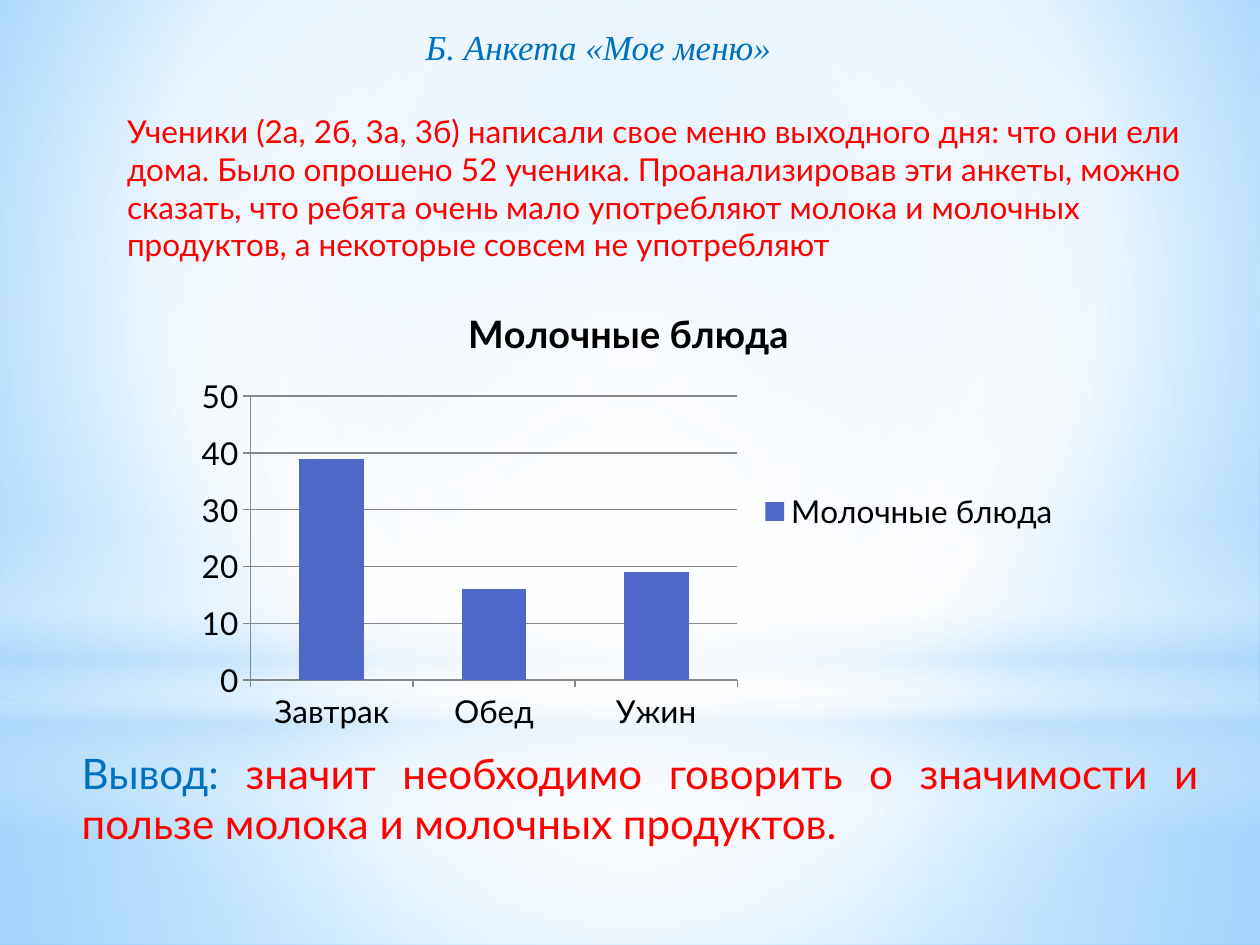
from lxml import etree
from pptx import Presentation
from pptx.chart.data import CategoryChartData
from pptx.dml.color import RGBColor
from pptx.enum.chart import XL_CHART_TYPE as Chart, XL_LEGEND_POSITION as Legend, XL_TICK_MARK as Tick
from pptx.enum.shapes import MSO_SHAPE as Shape
from pptx.enum.text import MSO_AUTO_SIZE as Fit, PP_ALIGN as Align
from pptx.oxml.ns import qn
from pptx.util import Inches, Pt

RED, BLUE, BLACK, GRAY = "FF0000", "0070C0", "000000", "888888"
WHITE, SKY = "FFFFFF", "B4DCFA"
FONT = "Lato"
CENTER = (50, 50, 50, 50)


def color(code):
    return RGBColor.from_string(code)


def place(box):
    return [Inches(v) for v in box]


def blend(item, fill, stops, focus=None, angle=90):
    """Fill with (position, colour, opacity) stops: radial with a focus, else linear."""
    fill.gradient()
    grad = item.element.find(".//" + qn("a:gradFill"))
    for child in list(grad):
        grad.remove(child)
    grad.set("rotWithShape", "1")
    group = etree.SubElement(grad, qn("a:gsLst"))
    for pos, code, alpha in stops:
        stop = etree.SubElement(group, qn("a:gs"), pos=str(pos * 1000))
        rgb = etree.SubElement(stop, qn("a:srgbClr"), val=code)
        if alpha < 100:
            etree.SubElement(rgb, qn("a:alpha"), val=str(alpha * 1000))
    if focus:
        way = etree.SubElement(grad, qn("a:path"), path="circle")
        sides = {side: str(v * 1000) for side, v in zip("ltrb", focus)}
        etree.SubElement(way, qn("a:fillToRect"), **sides)
    else:
        etree.SubElement(grad, qn("a:lin"), ang=str(angle * 60000), scaled="0")


def glow(slide, kind, box, stops, focus=None):
    shape = slide.shapes.add_shape(kind, *place(box))
    shape.shadow.inherit = False
    shape.line.fill.background()
    blend(shape, shape.fill, stops, focus)


def style(font, size, code=BLACK, name=FONT, bold=False, italic=False):
    font.size, font.name = Pt(size), name
    font.bold, font.italic = bold, italic
    font.color.rgb = color(code)


def text(slide, box, runs, size, align=Align.LEFT, wrap=True, spacing=None, after=None, **look):
    """Add a text box; runs are (words, colour) pairs."""
    frame = slide.shapes.add_textbox(*place(box)).text_frame
    frame.word_wrap = wrap
    frame.auto_size = Fit.SHAPE_TO_FIT_TEXT
    para = frame.paragraphs[0]
    para.alignment = align
    para.line_spacing = spacing
    para.space_after = after
    for words, code in runs:
        run = para.add_run()
        run.text = words
        style(run.font, size, code, **look)


def bars(slide, box, name, cats, vals):
    data = CategoryChartData()
    data.categories = cats
    data.add_series(name, vals)
    chart = slide.shapes.add_chart(Chart.COLUMN_CLUSTERED, *place(box), data).chart
    style(chart.font, 18)
    chart.has_title = True
    title = chart.chart_title
    title.include_in_layout = False
    title.text_frame.text = name
    style(title.text_frame.paragraphs[0].runs[0].font, 21.6, bold=True)
    chart.has_legend = True
    chart.legend.position = Legend.RIGHT
    chart.legend.include_in_layout = False

    plot = chart.plots[0]
    plot.gap_width = 150
    plot.vary_by_categories = False
    fill = plot.series[0].format.fill
    fill.solid()
    fill.fore_color.rgb = color("4E67C8")

    axis = chart.value_axis
    axis.minimum_scale, axis.maximum_scale, axis.major_unit = 0, 50, 10
    axis.has_major_gridlines = True
    for side in (axis, chart.category_axis):
        side.major_tick_mark = Tick.OUTSIDE
        side.minor_tick_mark = Tick.NONE
    for part in (axis, chart.category_axis, axis.major_gridlines):
        part.format.line.color.rgb = color(GRAY)
        part.format.line.width = Pt(0.75)


def scene(slide):
    """Paint the backdrop and its soft layers of light."""
    blend(slide, slide.background.fill,
          [(0, "9ED5FF", 100), (60, WHITE, 100), (100, "5BB9FF", 100)], (20, 10, 20, 60))
    glow(slide, Shape.RECTANGLE, (0, 5.58, 10, 1.92),
         [(0, WHITE, 91), (37, WHITE, 76), (100, SKY, 79)], CENTER)
    glow(slide, Shape.RECTANGLE, (0, 0, 10, 5.58),
         [(0, WHITE, 89), (48, WHITE, 62), (100, SKY, 79)], CENTER)
    glow(slide, Shape.RECTANGLE, (0, 4.12, 10, 2.5),
         [(0, WHITE, 0), (29, WHITE, 30), (45, SKY, 40),
          (55, WHITE, 26), (65, SKY, 60), (100, WHITE, 0)])
    glow(slide, Shape.OVAL, (0, 1.75, 10, 5.58),
         [(0, WHITE, 100), (56, WHITE, 0)], CENTER)


def main():
    deck = Presentation()
    deck.slide_width, deck.slide_height = Inches(10), Inches(7.5)
    slide = deck.slides.add_slide(deck.slide_layouts[6])
    scene(slide)
    bars(slide, (1.46, 2.25, 7.06, 3.62), "Молочные блюда",
         ["Завтрак", "Обед", "Ужин"], [39, 16, 19])
    text(slide, (0.91, 0.84, 8.58, 1.31),
         [("Ученики (2а, 2б, 3а, 3б) написали свое меню выходного дня: что они ели дома. "
           "Было опрошено 52 ученика. Проанализировав эти анкеты, можно сказать, что ребята "
           "очень мало употребляют молока и молочных продуктов, а некоторые совсем не "
           "употребляют", RED)], 18)
    text(slide, (0.55, 5.88, 9.06, 0.91),
         [("Вывод: ", BLUE),
          ("значит необходимо говорить о значимости и пользе молока и молочных продуктов.", RED)],
         24, align=Align.JUSTIFY)
    text(slide, (3.27, -0.01, 2.96, 0.55), [("Б. Анкета «Мое меню»", BLUE)], 20,
         align=Align.CENTER, wrap=False, spacing=1.5, after=Pt(10),
         name="Times New Roman", italic=True)
    deck.save("out.pptx")


if __name__ == "__main__":
    main()
